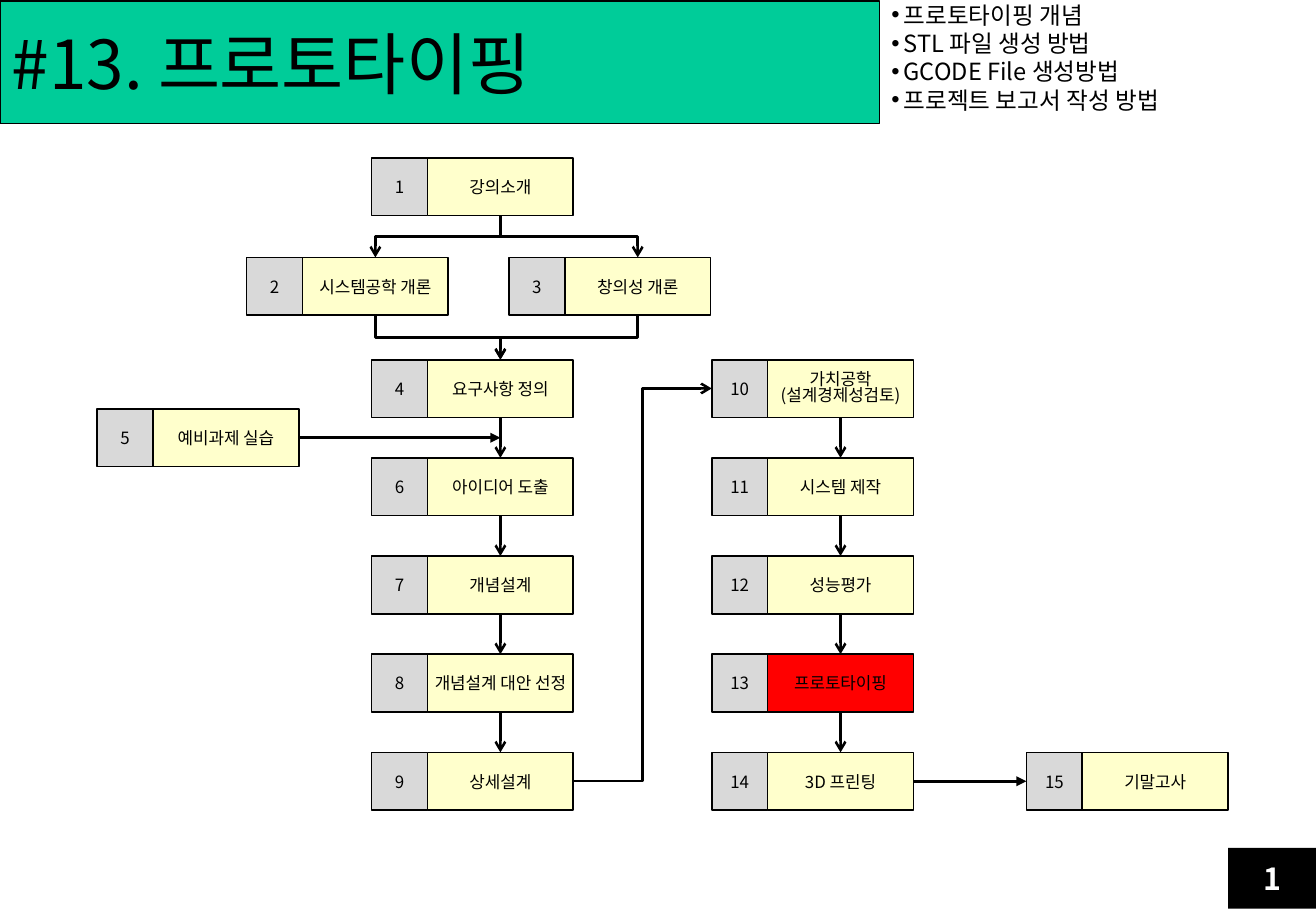
"""Builds the course roadmap slide for session 13, prototyping."""
from pptx import Presentation
from pptx.dml.color import RGBColor
from pptx.enum.shapes import MSO_CONNECTOR as CONN, MSO_SHAPE as SHAPE
from pptx.enum.text import MSO_ANCHOR as ANCHOR, PP_ALIGN as ALIGN
from pptx.oxml.ns import qn
from pptx.util import Pt
from lxml.etree import SubElement

TITLE = "#13. 프로토타이핑"
TOPICS = ["프로토타이핑 개념", "STL 파일 생성 방법", "GCODE File 생성방법", "프로젝트 보고서 작성 방법"]
PAGE = "1"

PITCH = 58.2
ROWS = [93.6, 152.6] + [213.2 + PITCH * i for i in range(5)]
MAIN, SECOND = 220.3, 421.9
NODES = {
    1: ("강의소개", MAIN, ROWS[0]),
    2: ("시스템공학 개론", 146.2, ROWS[1]),
    3: ("창의성 개론", 301.7, ROWS[1]),
    4: ("요구사항 정의", MAIN, ROWS[2]),
    5: ("예비과제 실습", 57.6, 242.4),
    6: ("아이디어 도출", MAIN, ROWS[3]),
    7: ("개념설계", MAIN, ROWS[4]),
    8: ("개념설계 대안 선정", MAIN, ROWS[5]),
    9: ("상세설계", MAIN, ROWS[6]),
    10: ("가치공학\n(설계경제성검토)", SECOND, ROWS[2]),
    11: ("시스템 제작", SECOND, ROWS[3]),
    12: ("성능평가", SECOND, ROWS[4]),
    13: ("프로토타이핑", SECOND, ROWS[5]),
    14: ("3D 프린팅", SECOND, ROWS[6]),
    15: ("기말고사", 608.4, ROWS[6]),
}
CURRENT = 13
DOWN_LINKS = [(1, 2), (1, 3), (2, 4), (3, 4), (4, 6), (6, 7), (7, 8), (8, 9),
              (10, 11), (11, 12), (12, 13), (13, 14)]

FONT = "Noto Sans CJK KR"
NUM_W, LABEL_W, NODE_H = 33.1, 86.4, 34.2
BLACK = RGBColor(0, 0, 0)
WHITE = RGBColor(255, 255, 255)
GREEN = RGBColor(0x00, 0xCC, 0x99)
YELLOW = RGBColor(0xFF, 0xFF, 0xCC)
GRAY = RGBColor(0xD9, 0xD9, 0xD9)
RED = RGBColor(255, 0, 0)

prs = Presentation()
prs.slide_width, prs.slide_height = Pt(780), Pt(540)
slide = prs.slides.add_slide(prs.slide_layouts[6])


def write(sp, text, size, color=BLACK, align=ALIGN.CENTER, bold=False):
    tf = sp.text_frame
    tf.word_wrap = True
    tf.text = text
    for p in tf.paragraphs:
        p.alignment = align
        if len(tf.paragraphs) > 1:
            p.line_spacing = 0.8
        for r in p.runs:
            r.font.name, r.font.size, r.font.bold = FONT, Pt(size), bold
            r.font.color.rgb = color
            SubElement(r.font._element, qn("a:ea"), typeface=FONT)
    return tf


def add_box(kind, x, y, w, h, fill, text, size, inset=None, line=BLACK, **style):
    sp = slide.shapes.add_shape(kind, Pt(x), Pt(y), Pt(w), Pt(h))
    sp.shadow.inherit = False
    sp.fill.solid()
    sp.fill.fore_color.rgb = fill
    if line is None:
        sp.line.fill.background()
    else:
        sp.line.color.rgb, sp.line.width = line, Pt(1)
    tf = write(sp, text, size, **style)
    tf.vertical_anchor = ANCHOR.MIDDLE
    if inset is not None:
        tf.margin_left = tf.margin_right = Pt(inset)
        tf.margin_top = tf.margin_bottom = Pt(3)


def add_arrow(kind, x1, y1, x2, y2, head="arrow", turn=0):
    c = slide.shapes.add_connector(kind, Pt(x1), Pt(y1), Pt(x2), Pt(y2))
    c.line.color.rgb, c.line.width = BLACK, Pt(1.5)
    sp_pr = c.element.spPr
    if turn:
        sp_pr.find(qn("a:xfrm")).set("rot", str(turn * 60000))
    SubElement(sp_pr.find(qn("a:ln")), qn("a:tailEnd"), type=head)
    SubElement(sp_pr, qn("a:effectLst"))


def link_down(start, end):
    (_, xa, ya), (_, xb, yb) = NODES[start], NODES[end]
    offset = NUM_W + LABEL_W / 2
    x1, y1, x2, y2 = xa + offset, ya + NODE_H, xb + offset, yb
    if x1 == x2:
        add_arrow(CONN.STRAIGHT, x1, y1, x2, y2)
        return
    side = 1 if x2 < x1 else -1
    cx, cy = (x1 + x2) / 2, (y1 + y2) / 2
    half_w, half_h = side * (y2 - y1) / 2, abs(x2 - x1) / 2
    add_arrow(CONN.ELBOW, cx - half_w, cy - half_h, cx + half_w, cy + half_h,
              turn=90 if side > 0 else 270)


def left_of(n):
    return NODES[n][1], NODES[n][2] + NODE_H / 2


def right_of(n):
    x, y = left_of(n)
    return x + NUM_W + LABEL_W, y


add_box(SHAPE.RECTANGLE, 0, 0.5, 521.3, 72.8, GREEN, TITLE, 40, align=ALIGN.LEFT)
add_box(SHAPE.RECTANGLE, 728, 502.6, 52, 36, BLACK, PAGE, 18, line=None, color=WHITE, bold=True)

topics = slide.shapes.add_textbox(Pt(521.3), Pt(0), Pt(258.5), Pt(105))
for p in write(topics, "\n".join(TOPICS), 14, align=ALIGN.LEFT).paragraphs:
    p.space_before = Pt(3.4)
    p_pr = p._p.get_or_add_pPr()
    p_pr.set("marL", str(Pt(7.2)))
    p_pr.set("indent", str(-Pt(7.2)))
    SubElement(p_pr, qn("a:buFont"), typeface="Arial")
    SubElement(p_pr, qn("a:buChar"), char="•")

for n, (label, x, y) in NODES.items():
    fill = RED if n == CURRENT else YELLOW
    add_box(SHAPE.FLOWCHART_PROCESS, x + NUM_W, y, LABEL_W, NODE_H, fill, label, 10, inset=3)
    add_box(SHAPE.FLOWCHART_PROCESS, x, y, NUM_W, NODE_H, GRAY, str(n), 10, inset=0)

for start, end in DOWN_LINKS:
    link_down(start, end)
add_arrow(CONN.ELBOW, *right_of(9), *left_of(10))
add_arrow(CONN.STRAIGHT, *right_of(14), *left_of(15), head="triangle")
x, y = right_of(5)
add_arrow(CONN.STRAIGHT, x, y, MAIN + NUM_W + LABEL_W / 2, y, head="triangle")

prs.save("out.pptx")
